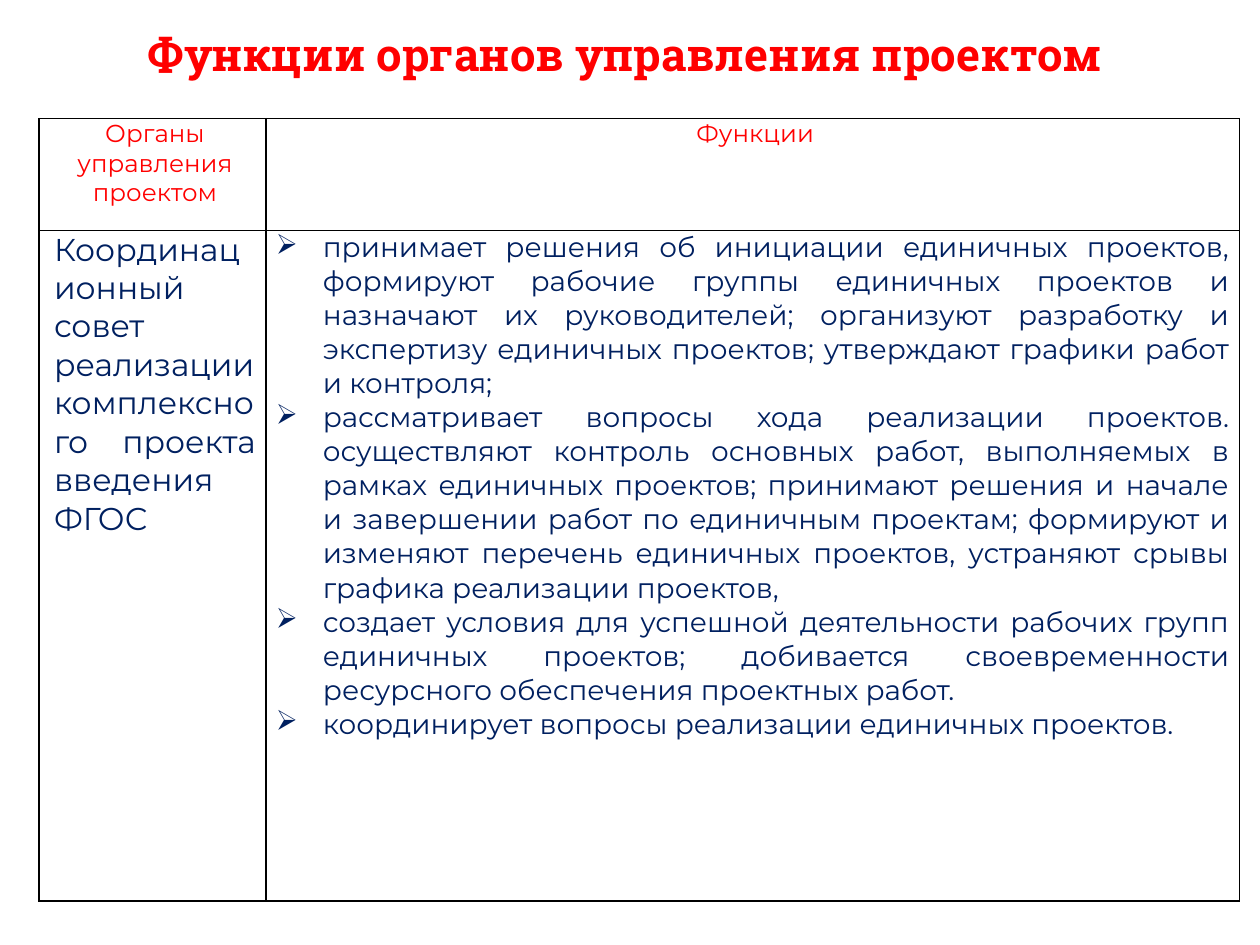
from dataclasses import dataclass

from lxml.etree import SubElement
from pptx import Presentation
from pptx.dml.color import RGBColor
from pptx.enum.text import MSO_AUTO_SIZE as AutoSize, PP_ALIGN as Align
from pptx.oxml import parse_xml
from pptx.oxml.ns import nsdecls, qn
from pptx.util import Cm, Pt

COLORS = {"red": "FF0000", "navy": "002060", "border": "000000"}
BODY_FONT = "Montserrat"
TITLE_FONT = "Roboto Slab"
BULLET = "➢"


@dataclass
class CellText:
    lines: list[str]
    size: int
    color: str
    align: Align
    bulleted: bool = False


def style_paragraph(p, font: str, size: int, color: str, align: Align, bold: bool = False) -> None:
    p.alignment = align
    for r in p.runs:
        r.font.name = font
        r.font.size = Pt(size)
        r.font.bold = bold
        r.font.color.rgb = RGBColor.from_string(COLORS[color])


def set_indent(p, bulleted: bool) -> None:
    pPr = p._p.get_or_add_pPr()
    pPr.set("marL", str(Cm(0.95 if bulleted else 0.1)))
    pPr.set("indent", str(Cm(-0.95 if bulleted else 0)))
    if bulleted:
        SubElement(pPr, qn("a:buChar")).set("char", BULLET)


def set_borders(cell) -> None:
    tcPr = cell._tc.get_or_add_tcPr()
    for i, side in enumerate("LRTB"):
        tcPr.insert(i, parse_xml(
            f'<a:ln{side} {nsdecls("a")} w="{Pt(1)}"><a:solidFill>'
            f'<a:srgbClr val="{COLORS["border"]}"/></a:solidFill></a:ln{side}>'))


def fill_cell(cell, text: CellText) -> None:
    cell.fill.background()
    set_borders(cell)
    cell.margin_left = cell.margin_right = Cm(0.2)
    cell.margin_top = cell.margin_bottom = 0
    tf = cell.text_frame
    tf.text = "\n".join(text.lines)
    for p in tf.paragraphs:
        set_indent(p, text.bulleted)
        style_paragraph(p, BODY_FONT, text.size, text.color, text.align)


def header(label: str) -> CellText:
    return CellText([label], 14, "red", Align.CENTER)


COL_WIDTHS = [Cm(4.57), Cm(19.63)]
ROW_HEIGHTS = [Cm(2.26), Cm(13.51)]
ROWS = [
    [header("Органы управления проектом"), header("Функции")],
    [
        CellText(["Координационный совет реализации комплексного проекта введения ФГОС"],
                 18, "navy", Align.JUSTIFY),
        CellText([
            "принимает решения об инициации единичных проектов, формируют рабочие группы "
            "единичных проектов и назначают их руководителей; организуют разработку и "
            "экспертизу единичных проектов; утверждают графики работ и контроля;",
            "рассматривает вопросы хода реализации проектов. осуществляют контроль основных "
            "работ, выполняемых в рамках единичных проектов; принимают решения и начале и "
            "завершении работ по единичным проектам; формируют и изменяют перечень единичных "
            "проектов, устраняют срывы графика реализации проектов,",
            "создает условия для успешной деятельности рабочих групп единичных проектов; "
            "добивается своевременности ресурсного обеспечения проектных работ.",
            "координирует вопросы реализации единичных проектов.",
        ], 16, "navy", Align.JUSTIFY, bulleted=True),
    ],
]

prs = Presentation()
prs.slide_width, prs.slide_height = Cm(25.4), Cm(19.05)
s = prs.slides.add_slide(prs.slide_layouts[6])

# Title
tf = s.shapes.add_textbox(Cm(0.41), Cm(0.41), Cm(24.41), Cm(1.37)).text_frame
tf.word_wrap = True
tf.auto_size = AutoSize.SHAPE_TO_FIT_TEXT
tf.text = "Функции органов управления проектом"
style_paragraph(tf.paragraphs[0], TITLE_FONT, 26, "red", Align.CENTER, bold=True)

# Table of bodies and their functions
table = s.shapes.add_table(len(ROWS), len(COL_WIDTHS), Cm(0.79), Cm(2.39),
                           sum(COL_WIDTHS), sum(ROW_HEIGHTS)).table
table.first_row = table.horz_banding = False
for column, width in zip(table.columns, COL_WIDTHS):
    column.width = width
for row, height, texts in zip(table.rows, ROW_HEIGHTS, ROWS):
    row.height = height
    for cell, text in zip(row.cells, texts):
        fill_cell(cell, text)

prs.save("out.pptx")
